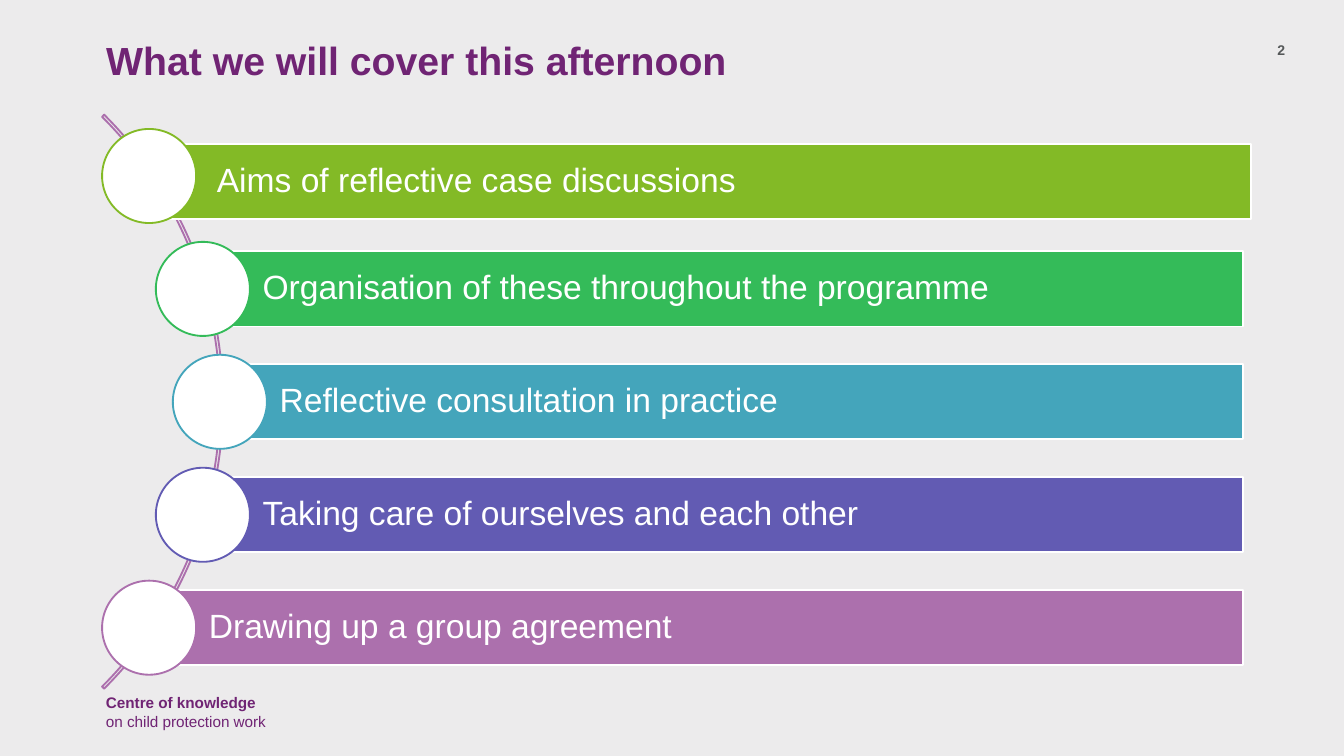
from pptx import Presentation
from pptx.dml.color import RGBColor
from pptx.enum.shapes import MSO_SHAPE
from pptx.enum.text import MSO_ANCHOR, MSO_AUTO_SIZE, PP_ALIGN
from pptx.util import Pt

BLOCK_ARC = MSO_SHAPE.BLOCK_ARC
OVAL = MSO_SHAPE.OVAL
RECTANGLE = MSO_SHAPE.RECTANGLE
TOP, MIDDLE = MSO_ANCHOR.TOP, MSO_ANCHOR.MIDDLE
LEFT, RIGHT = PP_ALIGN.LEFT, PP_ALIGN.RIGHT
GROW = MSO_AUTO_SIZE.SHAPE_TO_FIT_TEXT
NO_FIT = MSO_AUTO_SIZE.NONE

BACKGROUND = RGBColor(0xEC, 0xEB, 0xEC)
PURPLE = RGBColor(0x70, 0x24, 0x74)
GREY = RGBColor(0x55, 0x58, 0x59)
WHITE = RGBColor(0xFF, 0xFF, 0xFF)
LIME = RGBColor(0x83, 0xBA, 0x26)
GREEN = RGBColor(0x34, 0xBB, 0x59)
TEAL = RGBColor(0x44, 0xA5, 0xBB)
INDIGO = RGBColor(0x62, 0x5B, 0xB3)
MAUVE = RGBColor(0xAC, 0x70, 0xAD)

FONT = "Arial"
CIRCLE_SIZE = 50.4
FIRST_CIRCLE_TOP = 69.1
ROW_PITCH = 60.5
BAR_HEIGHT = 40.3
BAR_RIGHT = 666

# Wording, colour, left of the circle, and the shift of the bar (right, down)
TOPICS = [
    ("Aims of reflective case discussions", LIME, 54.7, (4.3, 2.9)),
    ("Organisation of these throughout the programme", GREEN, 83.5, (0, 0)),
    ("Reflective consultation in practice", TEAL, 92.6, (0, 0)),
    ("Taking care of ourselves and each other", INDIGO, 83.5, (0, 0)),
    ("Drawing up a group agreement", MAUVE, 54.7, (0, 0)),
]


def format_text(frame, size, color, bold=False, align=LEFT):
    for para in frame.paragraphs:
        para.alignment = align
        for span in para.runs:
            span.font.name = FONT
            span.font.size = Pt(size)
            span.font.bold = bold
            span.font.color.rgb = color


def add_outlined_shape(page, preset, left, top, width, height, fill, line):
    shape = page.shapes.add_shape(preset, Pt(left), Pt(top), Pt(width), Pt(height))
    shape.shadow.inherit = False
    if fill is None:
        shape.fill.background()
    else:
        shape.fill.solid()
        shape.fill.fore_color.rgb = fill
    shape.line.color.rgb = line
    shape.line.width = Pt(1)
    return shape


def add_text(page, left, top, width, height, text, size, color, align=LEFT):
    box = page.shapes.add_textbox(Pt(left), Pt(top), Pt(width), Pt(height))
    frame = box.text_frame
    frame.word_wrap = True
    frame.text = text
    format_text(frame, size, color, bold=True, align=align)
    return frame


def set_title(page, text):
    title = page.shapes.title
    title.left, title.top = Pt(49.7), Pt(18.7)
    title.width, title.height = Pt(602), Pt(50.4)
    frame = title.text_frame
    frame.text = text
    frame.vertical_anchor = TOP
    frame.auto_size = NO_FIT
    frame.paragraphs[0].line_spacing = 0.9
    format_text(frame, 21, PURPLE, bold=True)


def add_arc(page):
    """Draw the thin arc that links the circles, from 315 to 45 degrees."""
    arc = add_outlined_shape(page, BLOCK_ARC, -315.4, -2.2, 434.9, 434.9, None, MAUVE)
    arc.adjustments[0] = 189
    arc.adjustments[1] = 27
    arc.adjustments[2] = 0.0036


def add_topic(page, row, text, color, circle_left, bar_shift):
    """Add a bar that starts behind the middle of its circle."""
    shift_right, shift_down = bar_shift
    circle_top = FIRST_CIRCLE_TOP + row * ROW_PITCH
    bar_left = circle_left + CIRCLE_SIZE / 2
    bar_top = circle_top + (CIRCLE_SIZE - BAR_HEIGHT) / 2
    bar = add_outlined_shape(page, RECTANGLE, bar_left + shift_right,
                             bar_top + shift_down, BAR_RIGHT - bar_left,
                             BAR_HEIGHT, color, WHITE)
    frame = bar.text_frame
    frame.text = text
    frame.word_wrap = True
    frame.vertical_anchor = MIDDLE
    frame.margin_left = Pt(32)
    frame.margin_top = frame.margin_right = frame.margin_bottom = Pt(3.6)
    frame.paragraphs[0].line_spacing = 0.9
    format_text(frame, 18, WHITE)
    add_outlined_shape(page, OVAL, circle_left, circle_top,
                       CIRCLE_SIZE, CIRCLE_SIZE, WHITE, color)


def add_footer(page):
    frame = add_text(page, 49.7, 367.9, 128.9, 27.4,
                     "Centre of knowledge\von child protection work", 8.2, PURPLE)
    frame.auto_size = GROW
    frame.paragraphs[0].runs[1].font.bold = False


def main():
    deck = Presentation()
    deck.slide_width, deck.slide_height = Pt(720), Pt(405)
    page = deck.slides.add_slide(deck.slide_layouts.get_by_name("Title Only"))
    page.background.fill.solid()
    page.background.fill.fore_color.rgb = BACKGROUND

    add_footer(page)
    add_arc(page)
    for row, topic in enumerate(TOPICS):
        add_topic(page, row, *topic)
    add_text(page, 658.8, 18.7, 36.7, 18.7, "2", 7.5, GREY, align=RIGHT)
    set_title(page, "What we will cover this afternoon")
    deck.save("out.pptx")


if __name__ == "__main__":
    main()
